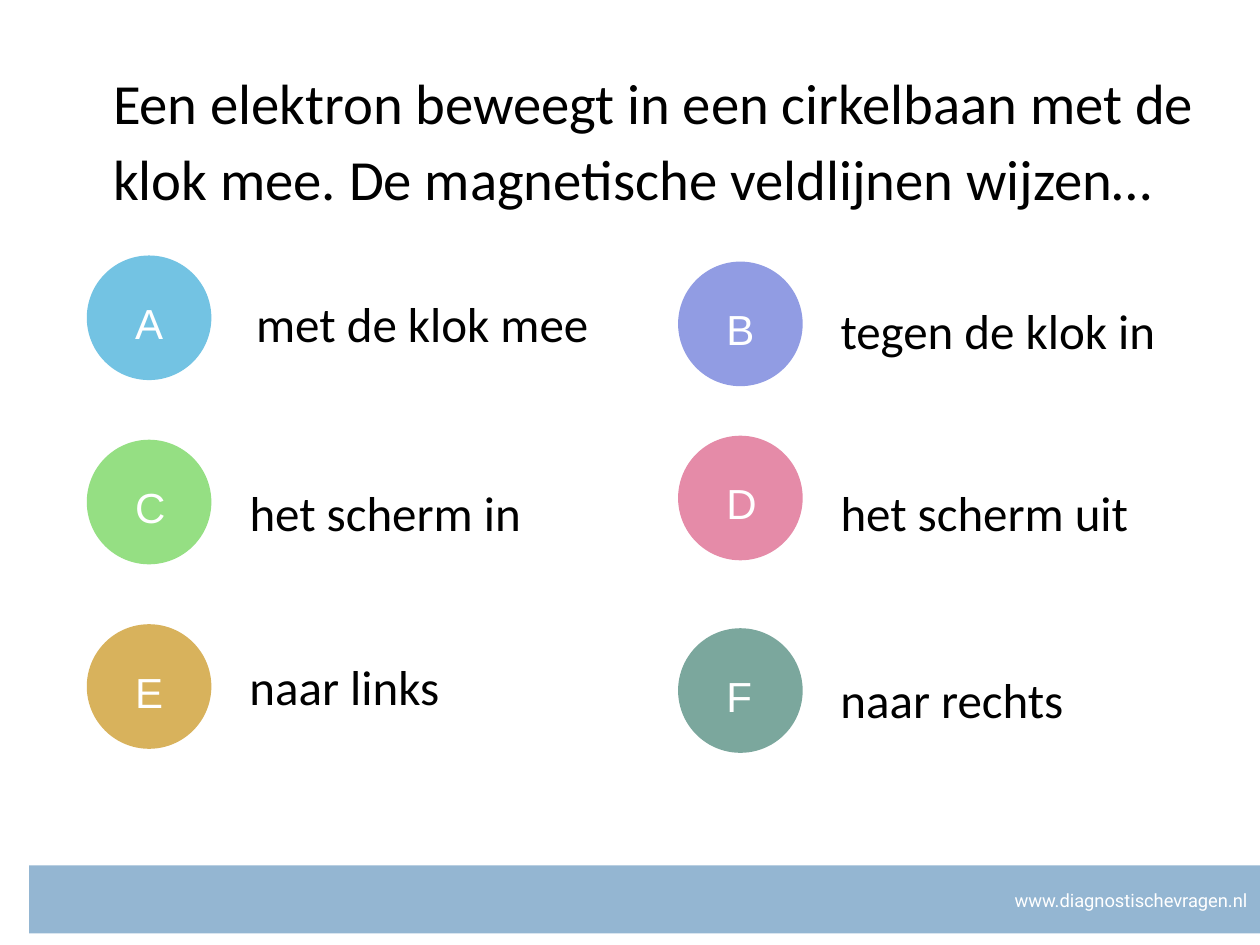
from pptx import Presentation
from pptx.dml.color import RGBColor
from pptx.enum import shapes, text
from pptx.util import Pt

COLORS = {
    "white": "FFFFFF", "black": "000000", "bar": "94B6D2",
    "A": "73C3E3", "B": "919CE3", "C": "95DF83",
    "D": "E58BA8", "E": "D8B25C", "F": "7BA79D",
}
CIRCLE = 71.2
LETTER_WIDTH, LETTER_HEIGHT = 28, 40
CIRCLE_LEFTS = (49.6, 387.5)

# Letter, circle top, answer, answer left, answer top, answer width
CHOICES = [
    ("A", 146, "met de klok mee", 143.5, 158.4, 216.7),
    ("B", 149.5, "tegen de klok in", 477.4, 162, 193),
    ("C", 251.3, "het scherm in", 139.7, 266.4, 188.6),
    ("D", 249, "het scherm uit", 477.4, 266.4, 193),
    ("E", 356.7, "naar links", 139.7, 365.8, 127.4),
    ("F", 359, "naar rechts", 477.4, 373, 139.7),
]


def color(name):
    return RGBColor.from_string(COLORS[name])


def add_filled(parent, kind, name, left, top, width, height):
    shape = parent.add_shape(kind, Pt(left), Pt(top), Pt(width), Pt(height))
    shape.shadow.inherit = False
    shape.fill.solid()
    shape.fill.fore_color.rgb = color(name)
    shape.line.fill.background()


def add_text(parent, words, left, top, width, height, font, size, name,
             spacing=1.2, inset=(2.9, 2.9), anchor=text.MSO_ANCHOR.MIDDLE,
             align=text.PP_ALIGN.LEFT):
    box = parent.add_textbox(Pt(left), Pt(top), Pt(width), Pt(height))
    frame = box.text_frame
    frame.word_wrap = True
    frame.vertical_anchor = anchor
    frame.margin_left = frame.margin_right = Pt(inset[0])
    frame.margin_top = frame.margin_bottom = Pt(inset[1])
    para = frame.paragraphs[0]
    para.alignment = align
    para.line_spacing = spacing
    span = para.add_run()
    span.text = words
    span.font.name = font
    span.font.size = Pt(size)
    span.font.color.rgb = color(name)


def add_badge(page, letter, left, top):
    group = page.shapes.add_group_shape().shapes
    add_filled(group, shapes.MSO_SHAPE.OVAL, letter, left, top, CIRCLE, CIRCLE)
    add_text(group, letter, left + 24.7, top + (CIRCLE - LETTER_HEIGHT) / 2,
             LETTER_WIDTH, LETTER_HEIGHT, "Arial", 24, "white")


def main():
    deck = Presentation()
    deck.slide_width, deck.slide_height = Pt(720), Pt(540)
    page = deck.slides.add_slide(deck.slide_layouts[6])

    # Footer bar with web address
    add_filled(page.shapes, shapes.MSO_SHAPE.RECTANGLE, "bar",
               16.6, 494.6, 703.4, 38.9)
    add_text(page.shapes, "www.diagnostischevragen.nl", 537.8, 504.7, 182.2, 20,
             "Roboto", 10.5, "white", spacing=1, inset=(7.2, 3.6),
             anchor=text.MSO_ANCHOR.TOP, align=text.PP_ALIGN.RIGHT)

    # Question
    add_text(page.shapes,
             "Een elektron beweegt in een cirkelbaan met de klok mee. "
             "De magnetische veldlijnen wijzen…",
             57.6, 31, 638.6, 67.7, "Calibri", 32.4, "black", spacing=1.11,
             inset=(7.2, 3.6), anchor=text.MSO_ANCHOR.TOP)

    # Answer choices in two columns
    for index, (letter, top, answer, left, answer_top, width) in enumerate(CHOICES):
        add_badge(page, letter, CIRCLE_LEFTS[index % 2], top)
        add_text(page.shapes, answer, left, answer_top, width, 46,
                 "Calibri", 28, "black")

    deck.save("out.pptx")


if __name__ == "__main__":
    main()
